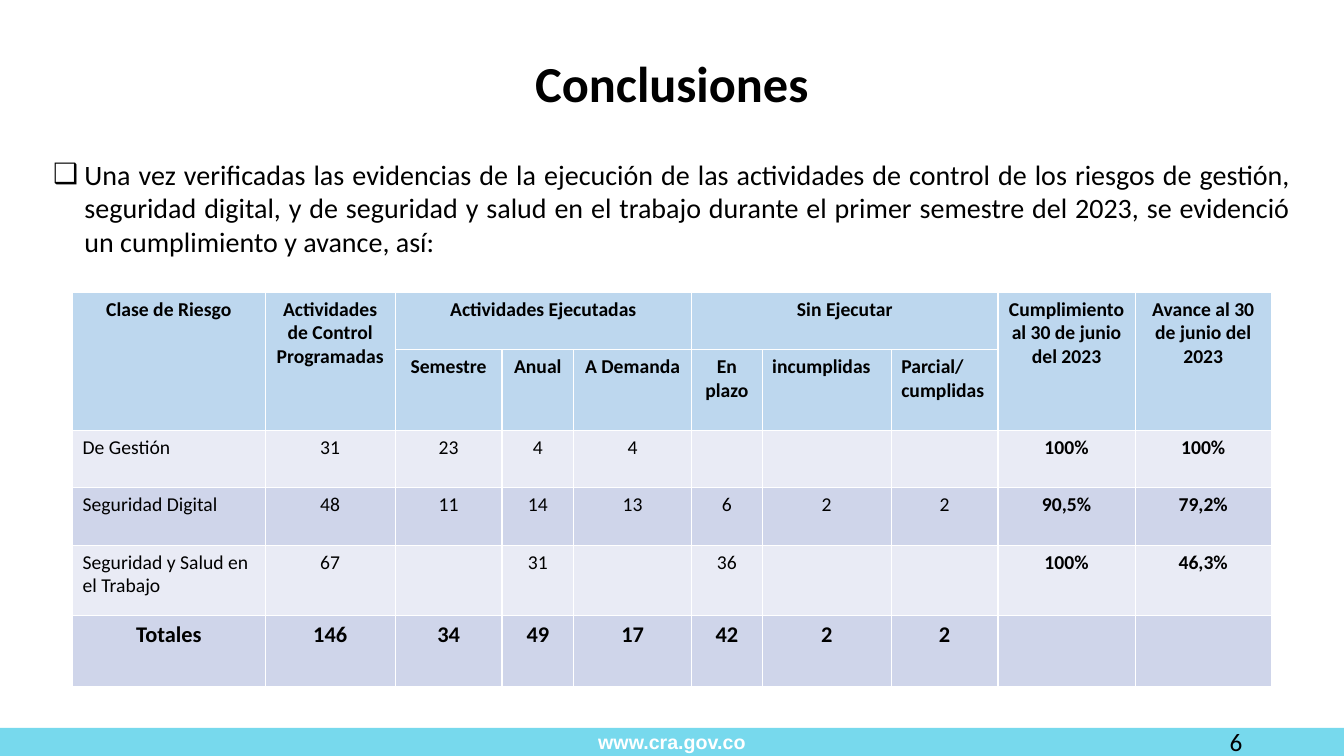
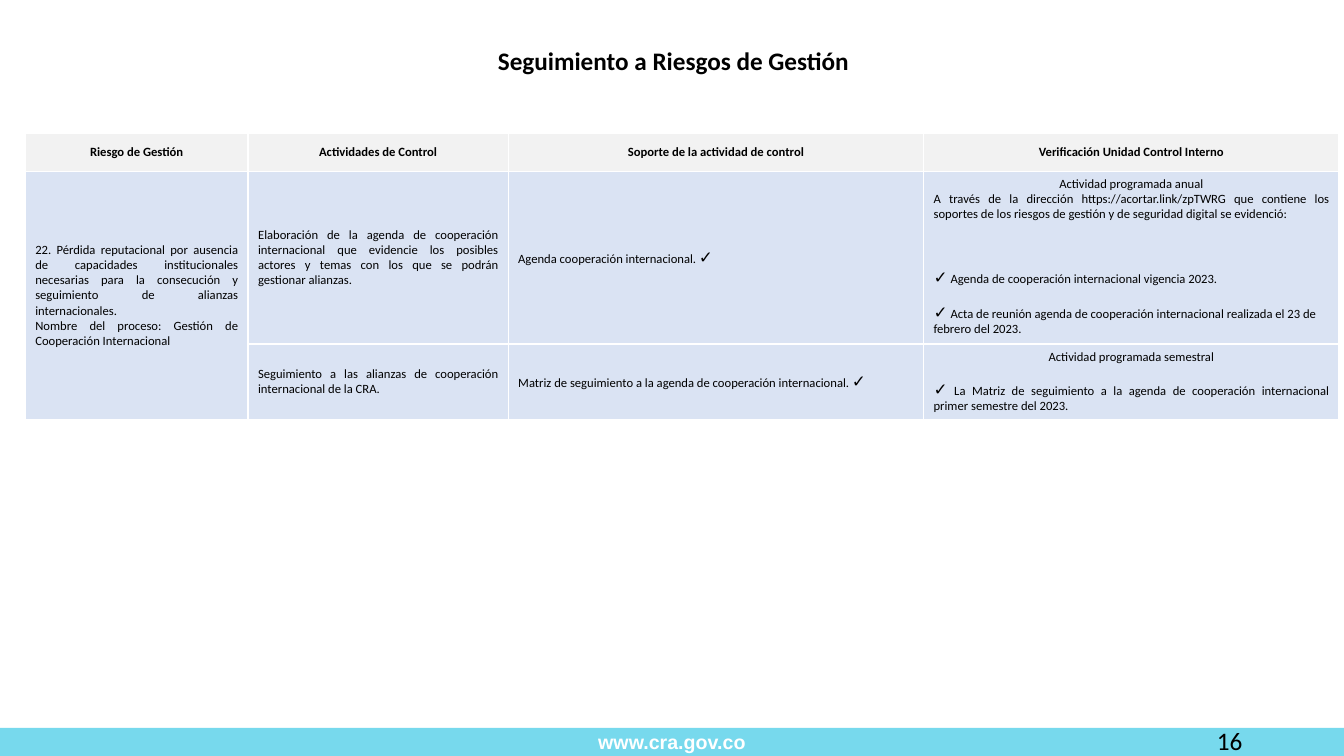
from lxml.etree import SubElement
from pptx import Presentation
from pptx.dml.color import RGBColor
from pptx.enum.shapes import MSO_SHAPE
from pptx.enum.text import MSO_ANCHOR, PP_ALIGN
from pptx.oxml.ns import qn
from pptx.util import Inches, Pt

COLORS = {"text": "000000", "white": "FFFFFF", "band": "77D9ED",
          "blue": "BDD7EE", "light": "E9EBF5", "dark": "CFD5EA",
          "grey": "F2F2F2", "pale": "DAE3F3"}
L, C, R, J = PP_ALIGN.LEFT, PP_ALIGN.CENTER, PP_ALIGN.RIGHT, PP_ALIGN.JUSTIFY
MARK = "✓"


def write(tf, paras, size, bold=False, font="Calibri", color="text"):
    tf.word_wrap = True
    for i, (align, before, text) in enumerate(paras):
        p = tf.paragraphs[0] if i == 0 else tf.add_paragraph()
        p.alignment = align
        if before:
            p.space_before = Pt(before)
        for part in filter(None, text.partition(MARK)):
            r = p.add_run()
            r.text = part
            r.font.name = "Arial" if part == MARK else font
            r.font.size = Pt(12 if part == MARK else size)
            r.font.bold = bold
            r.font.color.rgb = RGBColor.from_string(COLORS[color])


def add_table(s, left, top, widths, heights):
    table = s.shapes.add_table(len(heights), len(widths), Inches(left), Inches(top),
                               Inches(sum(widths)), Inches(sum(heights))).table
    for col, width in zip(table.columns, widths):
        col.width = Inches(width)
    for row, height in zip(table.rows, heights):
        row.height = Inches(height)
    return table


prs = Presentation()
prs.slide_width, prs.slide_height = Inches(13.33), Inches(7.5)

slides = []
for title, size, title_box, number, number_top in [
    ("Conclusiones", 36, (0.43, 0.47, 12.47, 0.71), "6", 7.16),
    ("Seguimiento a Riesgos de Gestión", 18, (0.16, 0.4, 13.04, 0.4), "16", 7.15),
]:
    s = prs.slides.add_slide(prs.slide_layouts[6])
    band = s.shapes.add_shape(MSO_SHAPE.RECTANGLE, 0, Inches(7.22), prs.slide_width, Inches(0.28))
    band.shadow.inherit = False
    band.fill.solid()
    band.fill.fore_color.rgb = RGBColor.from_string(COLORS["band"])
    band.line.fill.background()
    band.text_frame.vertical_anchor = MSO_ANCHOR.MIDDLE
    write(band.text_frame, [(C, 0, "www.cra.gov.co")], 14, True, "Arial", "white")
    number_box = s.shapes.add_textbox(Inches(9.42), Inches(number_top), Inches(3), Inches(0.4))
    write(number_box.text_frame, [(R, 0, number)], 18)
    heading = s.shapes.add_textbox(*map(Inches, title_box))
    write(heading.text_frame, [(C, 0, title)], size, True)
    slides.append(s)

summary, tracking = slides

intro = summary.shapes.add_textbox(Inches(0.43), Inches(1.51), Inches(12.47), Inches(1.1))
tf = intro.text_frame
pPr = tf.paragraphs[0]._p.get_or_add_pPr()
pPr.set("marL", str(Inches(0.31)))
pPr.set("indent", str(-Inches(0.31)))
SubElement(pPr, qn("a:buFont")).set("typeface", "Arial")
SubElement(pPr, qn("a:buChar")).set("char", "❑")
tab = SubElement(SubElement(pPr, qn("a:tabLst")), qn("a:tab"))
tab.set("pos", str(Inches(0.39)))
tab.set("algn", "l")
write(tf, [(J, 0, "Una vez verificadas las evidencias de la ejecución de las actividades de control de "
                  "los riesgos de gestión, seguridad digital, y de seguridad y salud en el trabajo "
                  "durante el primer semestre del 2023, se evidenció un cumplimiento y avance, así:")], 20)

results = [
    ["Clase de Riesgo", "Actividades de Control Programadas", "Actividades Ejecutadas", "", "",
     "Sin Ejecutar", "", "", "Cumplimiento al 30 de junio del 2023", "Avance al 30 de junio del 2023"],
    ["", "", "Semestre", "Anual", "A Demanda", "En plazo", "incumplidas", "Parcial/ cumplidas", "", ""],
    ["De Gestión", "31", "23", "4", "4", "", "", "", "100%", "100%"],
    ["Seguridad Digital", "48", "11", "14", "13", "6", "2", "2", "90,5%", "79,2%"],
    ["Seguridad y Salud en el Trabajo", "67", "", "31", "", "36", "", "", "100%", "46,3%"],
    ["Totales", "146", "34", "49", "17", "42", "2", "2", "", ""],
]
table = add_table(summary, 0.72, 2.9,
                  [1.91, 1.29, 1.06, 0.71, 1.17, 0.7, 1.28, 1.06, 1.36, 1.35],
                  [0.57, 0.8, 0.57, 0.57, 0.7, 0.7])
for col in (0, 1, 8, 9):
    table.cell(0, col).merge(table.cell(1, col))
for col in (2, 5):
    table.cell(0, col).merge(table.cell(0, col + 2))
row_fills = ["blue", "blue", "light", "dark", "light", "dark"]
for i, row in enumerate(results):
    for j, text in enumerate(row):
        cell = table.cell(i, j)
        cell.fill.solid()
        cell.fill.fore_color.rgb = RGBColor.from_string(COLORS[row_fills[i]])
        if text:
            left_aligned = (i == 1 and j in (6, 7)) or (2 <= i <= 4 and j == 0)
            write(cell.text_frame, [(L if left_aligned else C, 0, text)],
                  16 if i == 5 else 14, i in (0, 1, 5) or j >= 8)

risks = [
    [[(C, 0, "Riesgo de Gestión")],
     [(C, 0, "Actividades de Control")],
     [(C, 0, "Soporte de la actividad de control")],
     [(C, 0, "Verificación Unidad Control Interno")]],
    [[(J, 0, "22. Pérdida reputacional por ausencia de capacidades institucionales necesarias "
             "para la consecución y seguimiento de alianzas internacionales."),
      (J, 0, "Nombre del proceso: Gestión de Cooperación Internacional")],
     [(J, 0, "Elaboración de la agenda de cooperación internacional que evidencie los posibles "
             "actores y temas con los que se podrán gestionar alianzas.")],
     [(J, 0, "Agenda cooperación internacional. ✓")],
     [(C, 0, "Actividad programada anual"),
      (J, 0, "A través de la dirección https://acortar.link/zpTWRG que contiene los soportes de "
             "los riesgos de gestión y de seguridad digital se evidenció:"),
      (L, 33, "✓ Agenda de cooperación internacional vigencia 2023."),
      (L, 11, "✓ Acta de reunión agenda de cooperación internacional realizada el 23 de "
              "febrero del 2023.")]],
    [[],
     [(J, 0, "Seguimiento a las alianzas de cooperación internacional de la CRA.")],
     [(J, 0, "Matriz de seguimiento a la agenda de cooperación internacional. ✓")],
     [(C, 0, "Actividad programada semestral"),
      (J, 11, "✓ La Matriz de seguimiento a la agenda de cooperación internacional primer "
              "semestre del 2023.")]],
]
table = add_table(tracking, 0.25, 1.32, [2.21, 2.58, 4.12, 4.12], [0.38, 1.7, 0.74])
table.cell(1, 0).merge(table.cell(2, 0))
for i, row in enumerate(risks):
    for j, paras in enumerate(row):
        cell = table.cell(i, j)
        cell.fill.solid()
        cell.fill.fore_color.rgb = RGBColor.from_string(COLORS["pale" if i else "grey"])
        cell.vertical_anchor = MSO_ANCHOR.TOP if i and j == 3 else MSO_ANCHOR.MIDDLE
        write(cell.text_frame, paras, 9, i == 0)

prs.save("out.pptx")
